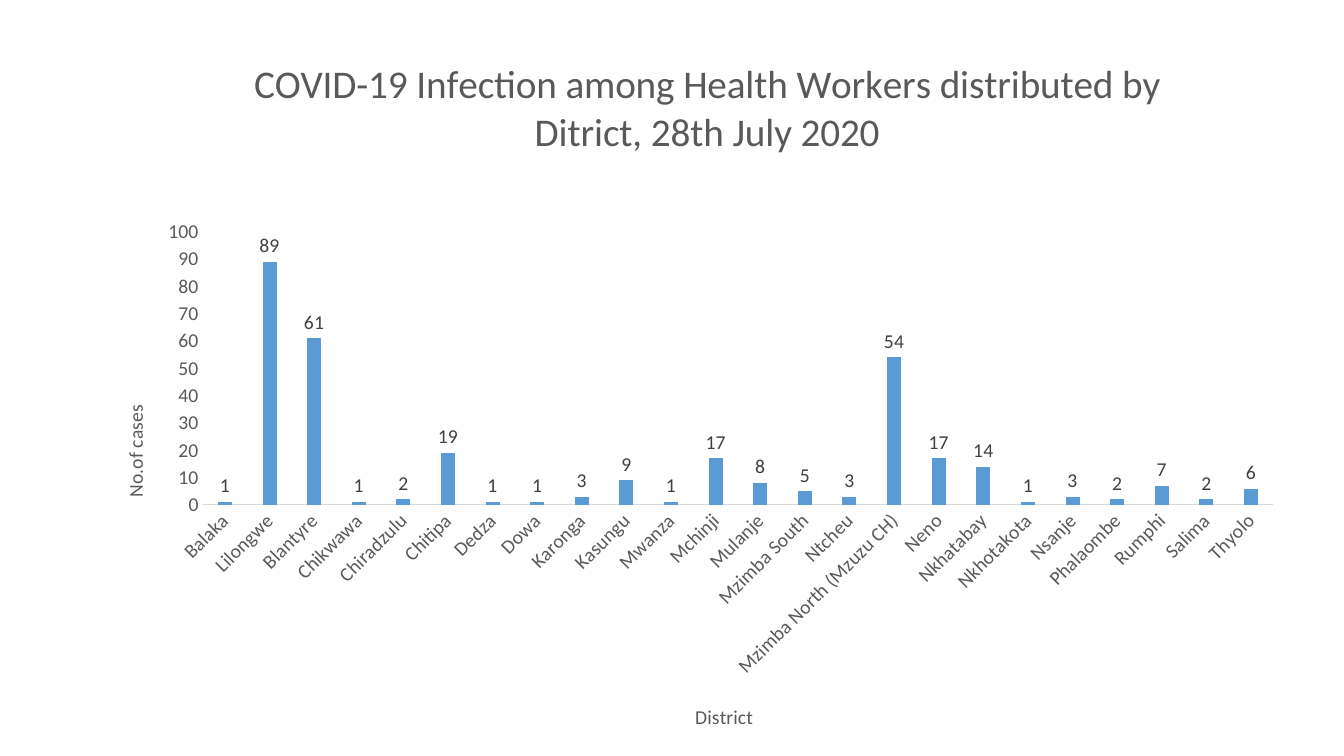
import pptx
import pptx.chart.data
import pptx.dml.color
import pptx.enum.chart
import pptx.oxml
import pptx.oxml.ns
import pptx.util
from pptx.util import Inches

CASES = {
    "Balaka": 1, "Lilongwe": 89, "Blantyre": 61, "Chikwawa": 1, "Chiradzulu": 2,
    "Chitipa": 19, "Dedza": 1, "Dowa": 1, "Karonga": 3, "Kasungu": 9, "Mwanza": 1,
    "Mchinji": 17, "Mulanje": 8, "Mzimba South": 5, "Ntcheu": 3,
    "Mzimba North (Mzuzu CH)": 54, "Neno": 17, "Nkhatabay": 14, "Nkhotakota": 1,
    "Nsanje": 3, "Phalaombe": 2, "Rumphi": 7, "Salima": 2, "Thyolo": 6,
}
HEADING = "COVID-19 Infection among Health Workers distributed by Ditrict, 28th July 2020"
GREY = "595959"


def color(hex_value):
    """Return the colour for a hex string."""
    return pptx.dml.color.RGBColor.from_string(hex_value)


def apply(target, values):
    """Set each attribute in values on target."""
    for name, value in values.items():
        setattr(target, name, value)


def style_font(font, size, hex_value):
    """Give a font its size and colour in Calibri."""
    apply(font, {"name": "Calibri", "size": pptx.util.Pt(size), "bold": False})
    font.color.rgb = color(hex_value)


def place(parent, index, box, **fractions):
    """Put a manual layout into a chart part, as fractions of the chart box."""
    for old in parent.findall(pptx.oxml.ns.qn("c:layout")):
        parent.remove(old)
    target = '<c:layoutTarget val="inner"/>' if "w" in fractions else ""
    modes = '<c:xMode val="edge"/><c:yMode val="edge"/>'
    sizes = {"x": box[2], "y": box[3], "w": box[2], "h": box[3]}
    starts = {"x": box[0], "y": box[1], "w": 0, "h": 0}
    values = "".join(
        f'<c:{key} val="{(inches - starts[key]) / sizes[key]:.4f}"/>'
        for key, inches in fractions.items())
    parent.insert(index, pptx.oxml.parse_xml(
        f'<c:layout {pptx.oxml.ns.nsdecls("c")}><c:manualLayout>'
        f'{target}{modes}{values}</c:manualLayout></c:layout>'))


def write_title(title, text, size, box, left, top, rotation=0):
    """Write a chart or axis title with its corner at the given point."""
    title.text_frame.text = text
    style_font(title.text_frame.paragraphs[0].runs[0].font, size, GREY)
    body = title.element.find(".//" + pptx.oxml.ns.qn("a:bodyPr"))
    body.set("rot", str(rotation * 60000))
    body.set("vert", "horz")
    place(title.element, 1, box, x=left, y=top)


def style_axis(axis):
    """Remove ticks and gridlines and set the label font."""
    apply(axis, {
        "has_major_gridlines": False,
        "major_tick_mark": pptx.enum.chart.XL_TICK_MARK.NONE,
        "minor_tick_mark": pptx.enum.chart.XL_TICK_MARK.NONE,
    })
    style_font(axis.tick_labels.font, 14, GREY)


def add_cases_chart(slide, box):
    """Draw the column chart of cases by district in the box."""
    left, top, width, height = box
    data = pptx.chart.data.CategoryChartData()
    data.categories = list(CASES)
    data.add_series("Series 1", list(CASES.values()))
    chart = slide.shapes.add_chart(
        pptx.enum.chart.XL_CHART_TYPE.COLUMN_CLUSTERED,
        *(Inches(length) for length in box), data).chart
    apply(chart, {"has_legend": False, "has_title": True})
    style_font(chart.font, 10, "000000")
    write_title(chart.chart_title, HEADING, 28, box, left + 1.55, top + 0.3)
    chart.chart_title.include_in_layout = False

    districts, counts = chart.category_axis, chart.value_axis
    for axis in (districts, counts):
        style_axis(axis)
    apply(counts, {"minimum_scale": 0, "maximum_scale": 100, "major_unit": 10})
    counts.format.line.fill.background()
    districts.format.line.color.rgb = color("D9D9D9")
    districts.format.line.width = pptx.util.Pt(0.75)
    labels_body = chart.element.xpath(".//c:catAx/c:txPr/a:bodyPr")[0]
    labels_body.set("rot", str(-45 * 60000))
    labels_body.set("vert", "horz")
    write_title(districts.axis_title, "District", 14, box, left + 5.96, top + 6.74)
    write_title(counts.axis_title, "No.of cases", 14, box, left + 0.27, top + 3.78, -90)

    plot = chart.plots[0]
    apply(plot, {"gap_width": 219, "overlap": -27, "vary_by_categories": False,
                 "has_data_labels": True})
    apply(plot.data_labels, {
        "show_value": True,
        "position": pptx.enum.chart.XL_LABEL_POSITION.OUTSIDE_END,
    })
    style_font(plot.data_labels.font, 14, "404040")
    bars = plot.series[0].format.fill
    bars.solid()
    bars.fore_color.rgb = color("5B9BD5")
    plot_area = chart.element.xpath(".//c:plotArea")[0]
    place(plot_area, 0, box, x=left + 1.11, y=top + 2.1, w=10.62, h=2.71)


def main():
    """Build the slide and save it."""
    deck = pptx.Presentation()
    apply(deck, {"slide_width": Inches(13.33), "slide_height": Inches(7.5)})
    slide = deck.slides.add_slide(deck.slide_layouts[6])
    add_cases_chart(slide, (0.9, 0.2, 11.97, 7.2))
    deck.save("out.pptx")


if __name__ == "__main__":
    main()
